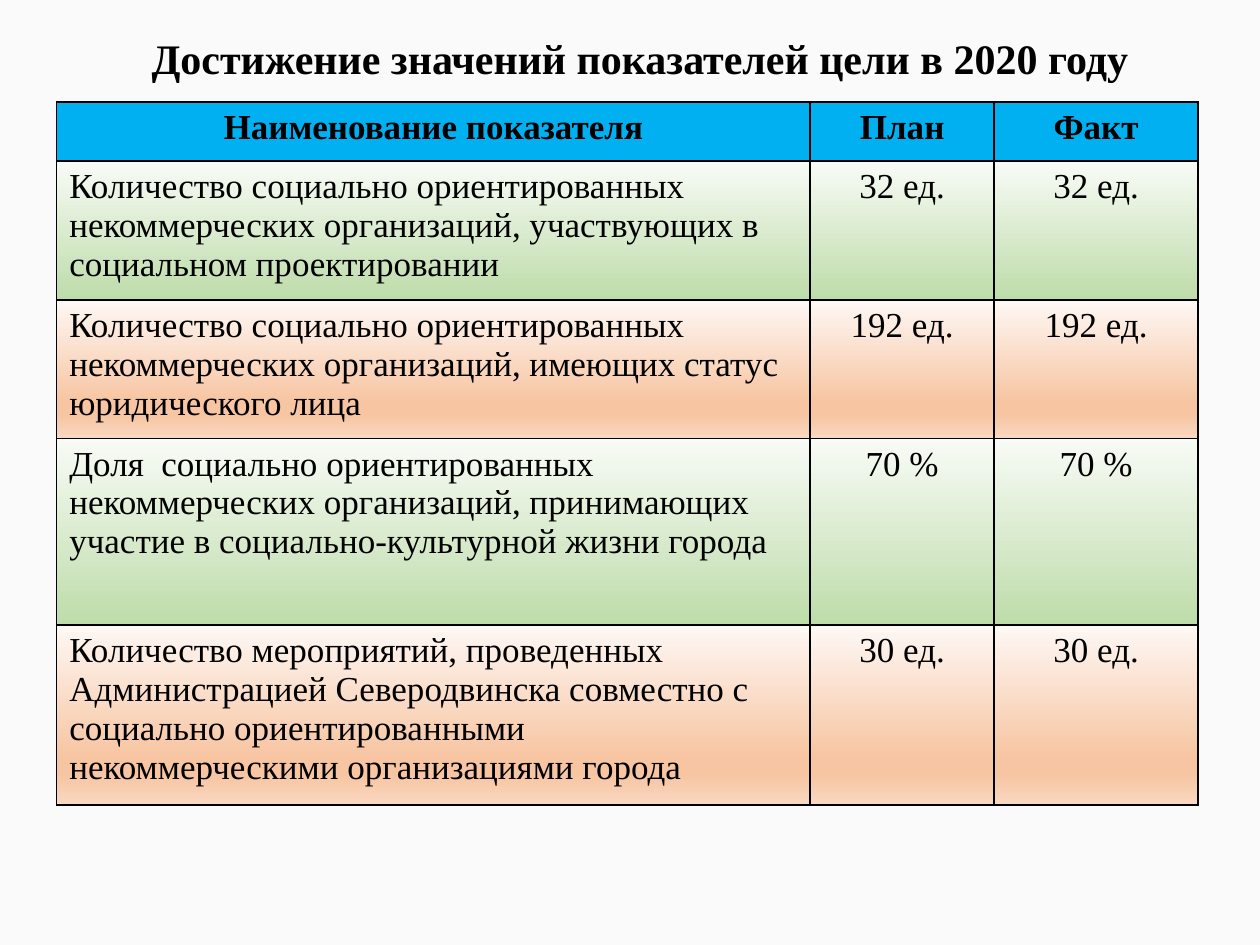
from lxml import etree
from pptx import Presentation
from pptx.dml.color import RGBColor
from pptx.enum.text import MSO_ANCHOR, PP_ALIGN
from pptx.oxml.ns import qn
from pptx.util import Inches, Pt

CENTER, LEFT = PP_ALIGN.CENTER, PP_ALIGN.LEFT
TOP = MSO_ANCHOR.TOP

BLACK = "000000"
HEADER_FILL = "00B0F0"
GREEN = [(0, "F8FBF6"), (100, "BEDCAA")]
ORANGE = [(0, "FEF8F5"), (74, "F7C5A2"), (83, "F7C5A2"), (100, "FAD8C1")]

HEADER = ["Наименование показателя", "План", "Факт"]
INDICATORS = [
    ("Количество социально ориентированных некоммерческих организаций, "
     "участвующих в социальном проектировании", "32 ед.", "32 ед."),
    ("Количество социально ориентированных некоммерческих организаций, "
     "имеющих статус юридического лица", "192 ед.", "192 ед."),
    ("Доля  социально ориентированных некоммерческих организаций, "
     "принимающих участие в социально-культурной жизни города", "70 %", "70 %"),
    ("Количество мероприятий, проведенных Администрацией Северодвинска "
     "совместно с социально ориентированными некоммерческими организациями "
     "города", "30 ед.", "30 ед."),
]
COL_WIDTHS = [5.98, 1.46, 1.62]
ROW_HEIGHTS = [0.47, 1.1, 1.1, 1.48, 1.43]


def rgb(value):
    return RGBColor.from_string(value)


def add_xml(parent, tag, **attrs):
    return etree.SubElement(parent, qn(tag), attrs)


def add_color(parent, color):
    add_xml(parent, "a:srgbClr", val=color)


class SlideBuilder:
    font = "Times New Roman"
    border_width = Pt(0.96)

    def __init__(self, slide, background):
        self.slide = slide
        fill = slide.background.fill
        fill.solid()
        fill.fore_color.rgb = rgb(background)

    def set_text(self, tf, text, size, bold, align):
        tf.word_wrap = True
        p = tf.paragraphs[0]
        p.text = text
        p.alignment = align
        p.font.name = self.font
        p.font.size = Pt(size)
        p.font.bold = bold
        p.font.color.rgb = rgb(BLACK)

    def title(self, text, left, top, width, height):
        sp = self.slide.shapes.add_textbox(
            Inches(left), Inches(top), Inches(width), Inches(height))
        self.set_text(sp.text_frame, text, 24, True, CENTER)

    def borders(self, cell):
        tc_pr = cell._tc.get_or_add_tcPr()
        for side in ("a:lnL", "a:lnR", "a:lnT", "a:lnB"):
            ln = add_xml(tc_pr, side, w=str(self.border_width))
            add_color(add_xml(ln, "a:solidFill"), BLACK)

    def gradient(self, cell, stops):
        """Fill a cell with colour stops running from top to bottom."""
        grad = add_xml(cell._tc.get_or_add_tcPr(), "a:gradFill", rotWithShape="1")
        stop_list = add_xml(grad, "a:gsLst")
        for percent, color in stops:
            add_color(add_xml(stop_list, "a:gs", pos=str(percent * 1000)), color)
        add_xml(grad, "a:lin", ang="5400000", scaled="0")

    def cell(self, cell, text, fill, bold, align):
        self.set_text(cell.text_frame, text, 20, bold, align)
        cell.vertical_anchor = TOP
        self.borders(cell)
        if isinstance(fill, str):
            cell.fill.solid()
            cell.fill.fore_color.rgb = rgb(fill)
        else:
            self.gradient(cell, fill)

    def table(self, rows, fills, left, top):
        table = self.slide.shapes.add_table(
            len(rows), len(COL_WIDTHS), Inches(left), Inches(top),
            Inches(sum(COL_WIDTHS)), Inches(sum(ROW_HEIGHTS))).table
        for column, width in zip(table.columns, COL_WIDTHS):
            column.width = Inches(width)
        for row, height in zip(table.rows, ROW_HEIGHTS):
            row.height = Inches(height)
        for i, (texts, fill) in enumerate(zip(rows, fills)):
            for j, text in enumerate(texts):
                align = LEFT if i and j == 0 else CENTER
                self.cell(table.cell(i, j), text, fill, i == 0, align)


def main():
    prs = Presentation()
    prs.slide_width, prs.slide_height = Inches(10), Inches(7.5)
    s = SlideBuilder(prs.slides.add_slide(prs.slide_layouts[6]), "FAFAFA")
    s.table([HEADER, *INDICATORS], [HEADER_FILL] + [GREEN, ORANGE] * 2, 0.45, 0.81)
    s.title("Достижение значений показателей цели в 2020 году", 0.75, 0.21, 8.66, 0.5)
    prs.save("out.pptx")


if __name__ == "__main__":
    main()
